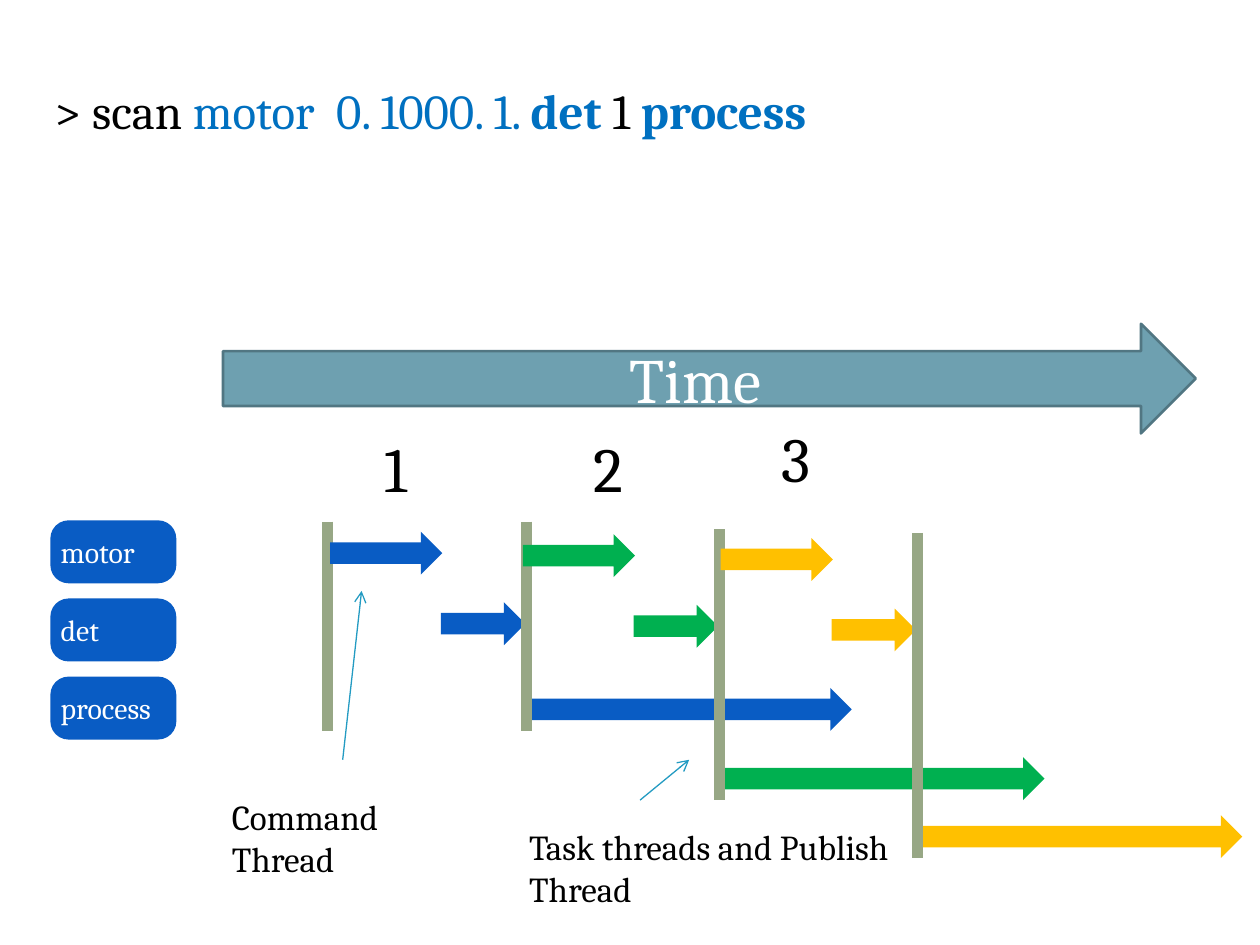
from dataclasses import dataclass

from lxml.etree import SubElement
from pptx import Presentation
from pptx.dml.color import RGBColor
from pptx.enum.shapes import MSO_CONNECTOR as Conn, MSO_SHAPE as Kind
from pptx.enum.text import MSO_ANCHOR as Anchor, MSO_AUTO_SIZE as Auto, PP_ALIGN as Align
from pptx.oxml.ns import qn
from pptx.util import Inches, Pt


@dataclass(frozen=True)
class Theme:
    """Colours, font and type sizes of the slide."""
    font: str = "Cambria"
    ink: str = "000000"
    white: str = "FFFFFF"
    code: str = "0070C0"
    blue: str = "095CC4"
    green: str = "00B050"
    gold: str = "FFC000"
    bar: str = "97A785"
    hint: str = "239BC2"
    time: str = "6EA0B0"
    edge: str = "517682"
    head: int = 28
    big: int = 36
    note: int = 20
    pill: int = 17


@dataclass(frozen=True)
class Pass:
    """One scan step: its arrows, closing bar and number, in grid units."""
    color: str
    col: float
    row: float
    task: float
    top: float
    num: tuple


@dataclass(frozen=True)
class Note:
    """A caption with a pointer, in grid units."""
    text: str
    box: tuple
    start: tuple
    end: tuple


LOOK = Theme()
COLS, ROWS = 100, 75
WIDE, HIGH = Inches(10), Inches(7.5)
TALL = 3.4
PASSES = [
    Pass(LOOK.blue, 26.2, 42.2, 54.6, 41.4, (29.5, 33.6, 3.6, 7.1)),
    Pass(LOOK.green, 41.5, 42.4, 60.1, 42, (46.1, 33.6, 4.5, 7.1)),
    Pass(LOOK.gold, 57.2, 42.7, 64.7, 42.3, (61, 32.8, 4.5, 7.1)),
]
STEPS = [(0, 8.9), (8.8, 6.7), (15.6, 25.8)]
NOTES = [
    Note("Command\nThread", (17.7, 62.7, 14.4, 7.4), (27.2, 60.3), (28.7, 46.9)),
    Note("Task threads and Publish\nThread", (41.3, 65.1, 31.7, 7.4), (50.8, 63.5), (54.7, 60.3)),
]
HEAD = [("> scan ", LOOK.ink, False), ("motor  0. 1000. 1. ", LOOK.code, False),
        ("det ", LOOK.code, True), ("1 ", LOOK.ink, False), ("process", LOOK.code, True)]


def place(*cells: float) -> list:
    """Turn alternating columns and rows into lengths."""
    return [round(n * (HIGH / ROWS if i % 2 else WIDE / COLS)) for i, n in enumerate(cells)]


def style(run, size: int, color: str, bold: bool = False) -> None:
    """Format one run."""
    font = run.font
    font.name, font.size, font.bold = LOOK.font, Pt(size), bold
    font.color.rgb = RGBColor.from_string(color)


def inset(frame, side: float, edge: float) -> None:
    """Set the inner margins of a text frame in inches."""
    frame.margin_left = frame.margin_right = Inches(side)
    frame.margin_top = frame.margin_bottom = Inches(edge)


def write(frame, text: str, size: int, color: str, align=Align.LEFT) -> None:
    """Fill a frame with one formatted paragraph."""
    para = frame.paragraphs[0]
    para.text, para.alignment = text, align
    for run in para.runs:
        style(run, size, color)


def shape(slide, kind, box: tuple, fill: str):
    """Draw a filled shape without outline or shadow."""
    item = slide.shapes.add_shape(kind, *place(*box))
    item.shadow.inherit = False
    item.fill.solid()
    item.fill.fore_color.rgb = RGBColor.from_string(fill)
    item.line.fill.background()
    item.text_frame.vertical_anchor = Anchor.MIDDLE
    return item


def label(slide, text: str, box: tuple, size: int, side: float, edge: float) -> None:
    """Add a plain text box that fits its text."""
    frame = slide.shapes.add_textbox(*place(*box)).text_frame
    frame.word_wrap, frame.auto_size = False, Auto.SHAPE_TO_FIT_TEXT
    inset(frame, side, edge)
    write(frame, text, size, LOOK.ink)


def line(slide, start: tuple, end: tuple, color: str, width: float, tip: bool = False) -> None:
    """Draw a straight line, with an arrowhead if asked."""
    item = slide.shapes.add_connector(Conn.STRAIGHT, *place(*start, *end))
    item.line.color.rgb = RGBColor.from_string(color)
    item.line.width = Pt(width)
    if tip:
        SubElement(item.line._get_or_add_ln(), qn("a:tailEnd"), type="arrow")
    SubElement(item._element.spPr, qn("a:effectLst"))


def title(slide) -> None:
    """Place the command in the title."""
    item = slide.shapes.title
    item.left, item.top, item.width, item.height = place(4.3, 4.4, 91.7, 8.7)
    frame = item.text_frame
    frame.auto_size, frame.vertical_anchor = Auto.NONE, Anchor.MIDDLE
    inset(frame, 0, 0)
    para = frame.paragraphs[0]
    para.alignment = Align.LEFT
    for text, color, bold in HEAD:
        run = para.add_run()
        run.text = text
        style(run, LOOK.head, color, bold)


def pill(slide, index: int, text: str) -> None:
    """Draw the name of one task row."""
    item = shape(slide, Kind.ROUNDED_RECTANGLE, (4, 41.3 + 6.2 * index, 10, 5), LOOK.blue)
    item.adjustments[0] = 0.29
    inset(item.text_frame, 0.04, 0.04)
    write(item.text_frame, text, LOOK.pill, LOOK.white)


def chain(slide, step: Pass) -> None:
    """Draw the arrows of one pass and its closing bar."""
    rows = (step.row, step.row + 5.6, step.task)
    for (shift, width), row in zip(STEPS, rows):
        shape(slide, Kind.RIGHT_ARROW, (step.col + shift, row, width, TALL), step.color)
    col = step.col + STEPS[-1][0]
    line(slide, (col, step.top), (col, step.task + TALL), LOOK.bar, 6)


def main() -> None:
    """Build and save the slide."""
    deck = Presentation()
    deck.slide_width, deck.slide_height = WIDE, HIGH
    slide = deck.slides.add_slide(deck.slide_layouts[5])
    title(slide)
    for index, text in enumerate(("motor", "det", "process")):
        pill(slide, index, text)
    line(slide, (26, 41.4), (26, 58), LOOK.bar, 6)
    for step in PASSES:
        chain(slide, step)
    for note in NOTES:
        label(slide, note.text, note.box, LOOK.note, 0.07, 0.04)
        line(slide, note.start, note.end, LOOK.hint, 0.75, True)
    time = shape(slide, Kind.RIGHT_ARROW, (17.7, 25.7, 77.2, 8.7), LOOK.time)
    time.line.color.rgb = RGBColor.from_string(LOOK.edge)
    time.line.width = Pt(1.5)
    write(time.text_frame, "Time", LOOK.big, LOOK.white, Align.CENTER)
    for index, step in enumerate(PASSES, 1):
        label(slide, str(index), step.num, LOOK.big, 0.1, 0.05)
    deck.save("out.pptx")


if __name__ == "__main__":
    main()
